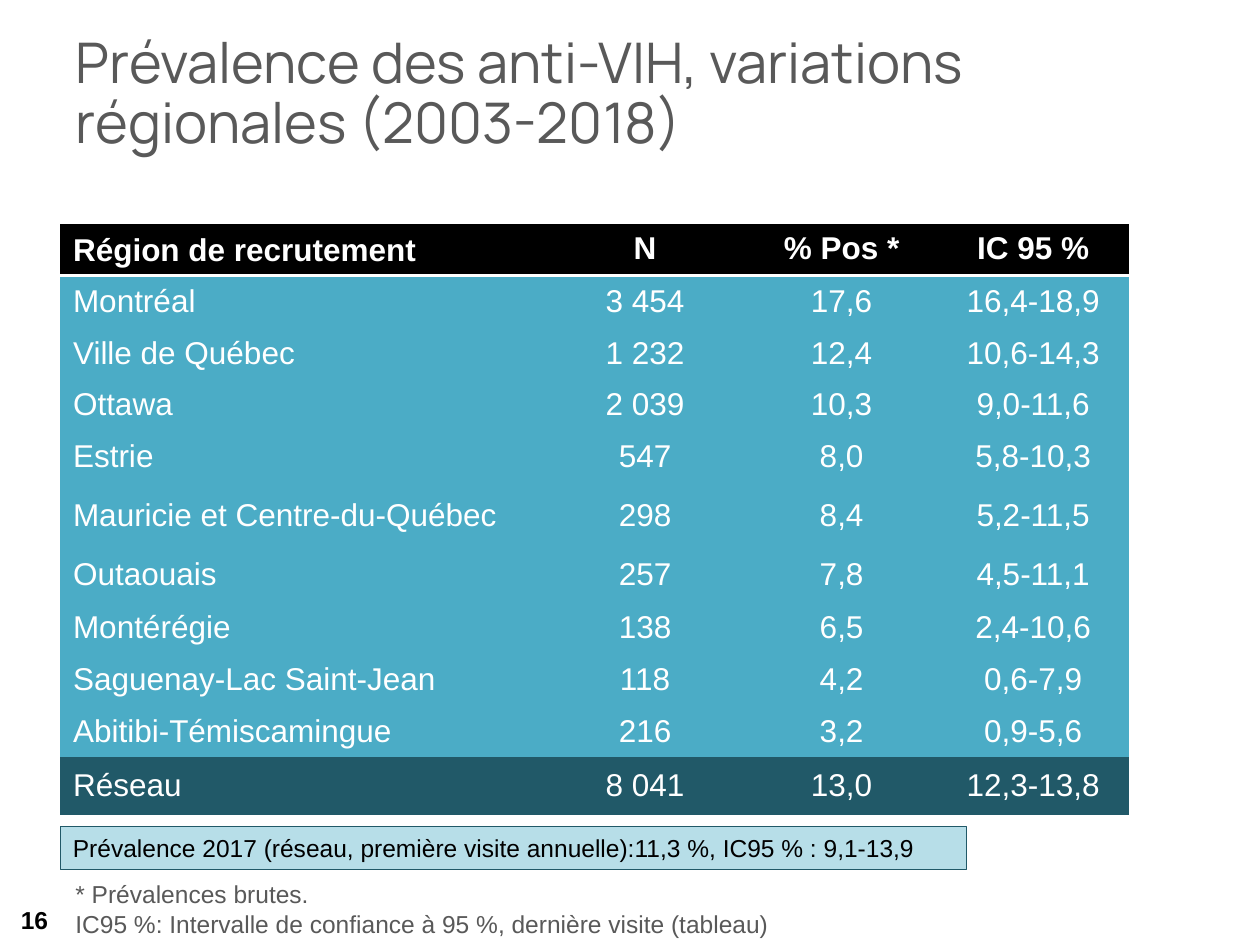
from dataclasses import dataclass

from lxml import etree
from pptx import Presentation
from pptx import util as u
from pptx.dml.color import RGBColor
from pptx.enum import shapes, text
from pptx.oxml.ns import qn


@dataclass(frozen=True)
class Theme:
    head: str = "Manrope"
    body: str = "Arial"
    grey: str = "595959"
    black: str = "000000"
    white: str = "FFFFFF"
    teal: str = "4BACC6"
    dark: str = "215968"
    pale: str = "B7DEE8"
    big: int = 32
    mid: int = 18
    small: int = 14
    plain: str = "{2D5ABB26-0587-4C30-8999-92F81FD0307C}"


@dataclass(frozen=True)
class Style:
    font: str
    size: int
    color: str
    bold: bool = False


@dataclass(frozen=True)
class Box:
    x: float
    y: float
    w: float
    h: float

    def lengths(self) -> tuple:
        return tuple(u.Inches(n) for n in (self.x, self.y, self.w, self.h))


@dataclass(frozen=True)
class Row:
    cells: tuple
    high: float = 0.41


T = Theme()
LEFT, MID, RIGHT = text.PP_ALIGN.LEFT, text.PP_ALIGN.CENTER, text.PP_ALIGN.RIGHT
TOP, CORE = text.MSO_ANCHOR.TOP, text.MSO_ANCHOR.MIDDLE

COLS = (3.84, 1.6, 1.52, 1.52)
ROWS = (
    Row(("Région de recrutement", "N", "% Pos *", "IC 95 %")),
    Row(("Montréal", "3 454", "17,6", "16,4-18,9")),
    Row(("Ville de Québec", "1 232", "12,4", "10,6-14,3")),
    Row(("Ottawa", "2 039", "10,3", "9,0-11,6")),
    Row(("Estrie", "547", "8,0", "5,8-10,3")),
    Row(("Mauricie et Centre-du-Québec", "298", "8,4", "5,2-11,5"), 0.52),
    Row(("Outaouais", "257", "7,8", "4,5-11,1"), 0.42),
    Row(("Montérégie", "138", "6,5", "2,4-10,6"), 0.42),
    Row(("Saguenay-Lac Saint-Jean", "118", "4,2", "0,6-7,9")),
    Row(("Abitibi-Témiscamingue", "216", "3,2", "0,9-5,6")),
    Row(("Réseau", "8 041", "13,0", "12,3-13,8"), 0.46),
)


def rgb(code: str) -> RGBColor:
    return RGBColor.from_string(code)


def write(frame, lines: tuple, style: Style, align=LEFT) -> None:
    for i, line in enumerate(lines):
        para = frame.paragraphs[0] if i == 0 else frame.add_paragraph()
        para.alignment = align
        run = para.add_run()
        run.text = line
        font = run.font
        font.name, font.size, font.bold = style.font, u.Pt(style.size), style.bold
        font.color.rgb = rgb(style.color)


def label(slide, box: Box, lines: tuple, style: Style, align=LEFT, anchor=TOP):
    frame = slide.shapes.add_textbox(*box.lengths()).text_frame
    frame.word_wrap = True
    frame.vertical_anchor = anchor
    write(frame, lines, style, align)
    return frame


def banner(slide, box: Box, line: str, style: Style) -> None:
    shape = slide.shapes.add_shape(shapes.MSO_SHAPE.RECTANGLE, *box.lengths())
    shape.shadow.inherit = False
    shape.fill.solid()
    shape.fill.fore_color.rgb = rgb(T.pale)
    shape.line.color.rgb = rgb(T.dark)
    shape.line.width = u.Pt(0.75)
    shape.text_frame.word_wrap = True
    shape.text_frame.vertical_anchor = TOP
    write(shape.text_frame, (line,), style)


def underline(cell, color: str, width: float) -> None:
    edge = etree.Element(qn("a:lnB"), w=str(u.Pt(width)))
    fill = etree.SubElement(edge, qn("a:solidFill"))
    etree.SubElement(fill, qn("a:srgbClr"), val=color)
    cell._tc.get_or_add_tcPr().insert(0, edge)


def grid(slide, x: float, y: float) -> None:
    box = Box(x, y, sum(COLS), sum(row.high for row in ROWS))
    table = slide.shapes.add_table(len(ROWS), len(COLS), *box.lengths()).table
    table._tbl.tblPr.find(qn("a:tableStyleId")).text = T.plain
    for col, wide in zip(table.columns, COLS):
        col.width = u.Inches(wide)
    last = len(ROWS) - 1
    for r, row in enumerate(ROWS):
        table.rows[r].height = u.Inches(row.high)
        fill = {0: T.black, last: T.dark}.get(r, T.teal)
        style = Style(T.body, T.mid, T.white, r == 0)
        for c, word in enumerate(row.cells):
            cell = table.cell(r, c)
            cell.fill.solid()
            cell.fill.fore_color.rgb = rgb(fill)
            cell.vertical_anchor = TOP if r == 0 and c else CORE
            write(cell.text_frame, (word,), style, MID if c else LEFT)
            if r == 0:
                underline(cell, T.white, 2)


def main() -> None:
    deck = Presentation()
    deck.slide_width, deck.slide_height = u.Inches(10), u.Inches(7.5)
    slide = deck.slides.add_slide(deck.slide_layouts[6])

    title = label(slide, Box(0.5, 0.13, 9, 1.25),
                  ("Prévalence des anti-VIH, variations régionales (2003-2018)",),
                  Style(T.head, T.big, T.grey), anchor=CORE)
    title.paragraphs[0].line_spacing = 0.9
    label(slide, Box(0, 7.1, 0.48, 0.4), ("16",),
          Style(T.body, T.small, T.black, True), RIGHT, CORE)
    grid(slide, 0.48, 1.78)
    label(slide, Box(0.5, 6.93, 7.34, 0.57),
          ("* Prévalences brutes.",
           "IC95 %: Intervalle de confiance à 95 %, dernière visite (tableau)"),
          Style(T.body, T.small, T.grey))
    banner(slide, Box(0.48, 6.56, 7.19, 0.34),
           "Prévalence 2017 (réseau, première visite annuelle):11,3 %, IC95 % : 9,1-13,9",
           Style(T.body, T.small, T.black))
    deck.save("out.pptx")


if __name__ == "__main__":
    main()
